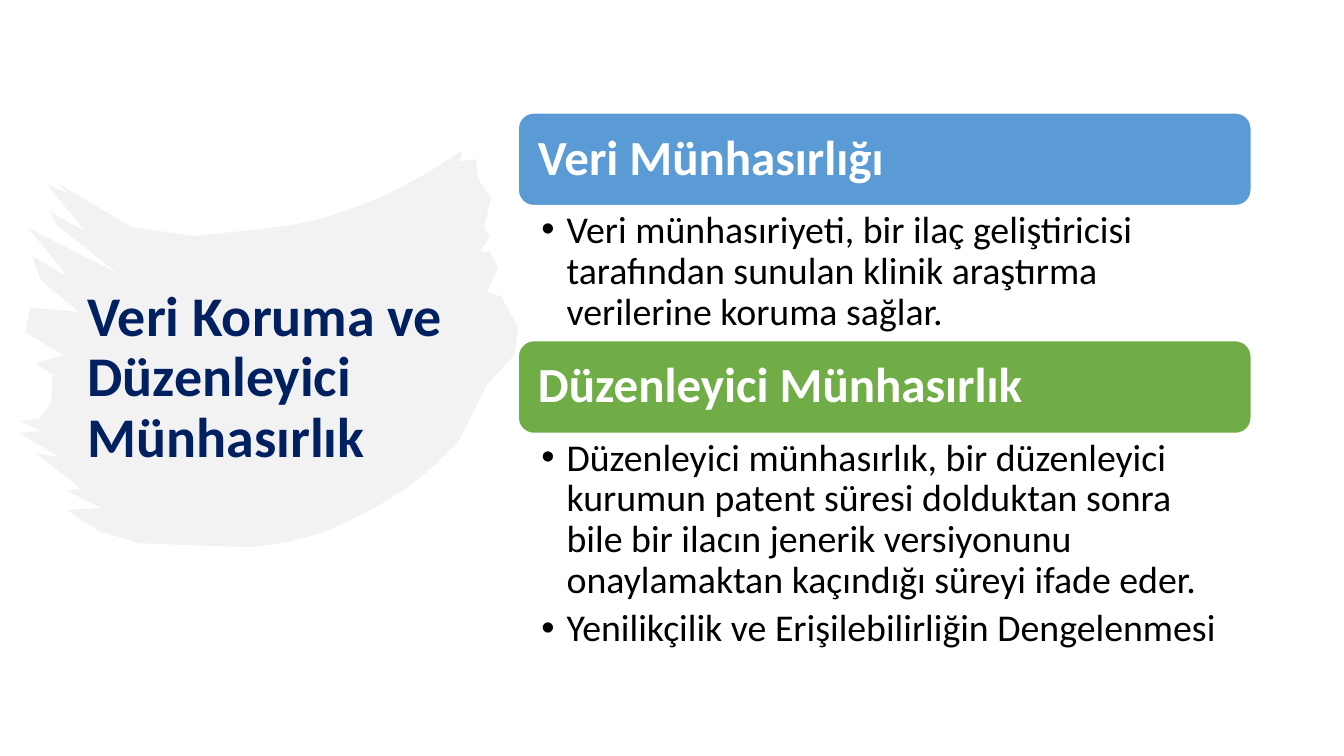
from collections import namedtuple
from dataclasses import dataclass

from lxml import etree
from pptx import Presentation
from pptx import util as u
from pptx.dml.color import RGBColor
from pptx.enum import shapes, text
from pptx.oxml.ns import qn

Box = namedtuple("Box", "left top width height")


@dataclass(frozen=True)
class Theme:
    font: str = "Calibri"
    title_size: int = 40
    heading_size: int = 35
    body_size: int = 27
    title: str = "002060"
    heading: str = "FFFFFF"
    body: str = "000000"
    brush: str = "E7E6E6"
    data_bar: str = "5B9BD5"
    regulatory_bar: str = "70AD47"


THEME = Theme()
SLIDE_WIDTH, SLIDE_HEIGHT = 13.33, 7.5
BRUSH = Box(0.19, 1.5, 4.95, 3.93)
TITLE = Box(0.77, 0.1 * SLIDE_HEIGHT, 4.37, 6.01)
SECTIONS = Box(5.14, 1.12, 7.27, 5.44)
HEADING_HEIGHT = 0.92

TITLE_TEXT = "Veri Koruma ve Düzenleyici Münhasırlık"
# heading, bar colour, body height, bullets
SECTION_CONTENT = [
    ("Veri Münhasırlığı", THEME.data_bar, 1.34, [
        "Veri münhasıriyeti, bir ilaç geliştiricisi tarafından sunulan klinik "
        "araştırma verilerine koruma sağlar."]),
    ("Düzenleyici Münhasırlık", THEME.regulatory_bar, 2.26, [
        "Düzenleyici münhasırlık, bir düzenleyici kurumun patent süresi "
        "dolduktan sonra bile bir ilacın jenerik versiyonunu onaylamaktan "
        "kaçındığı süreyi ifade eder.",
        "Yenilikçilik ve Erişilebilirliğin Dengelenmesi"]),
]

# Edges of the brush stroke, clockwise; scaled to its box when drawn
RIGHT_EDGE = [(458, 150), (456, 160), (472, 158), (474, 177), (487, 197),
              (480, 226), (486, 235), (476, 249), (486, 250), (494, 266),
              (483, 289), (497, 294), (514, 325), (510, 352), (483, 381)]
BOTTOM_ARC = [(456, 435), (456, 436), (372, 533), (249, 542)]
LEFT_EDGE = [(139, 538), (98, 526), (66, 505), (100, 503), (66, 486),
             (80, 484), (36, 449), (60, 453), (19, 429), (41, 427),
             (20, 417), (39, 415), (51, 398), (52, 371), (35, 360),
             (63, 352), (25, 329), (30, 305), (78, 309), (40, 277),
             (32, 254), (67, 274), (28, 226), (117, 271), (56, 223),
             (50, 210), (85, 230), (46, 182), (67, 192), (58, 182),
             (130, 225), (192, 234)]
TOP_ARC = [(260, 227), (342, 220), (400, 184), (423, 172)]


def inches(box):
    return [u.Inches(length) for length in box]


def colour(hex_value):
    return RGBColor.from_string(hex_value)


def format_paragraph(paragraph, size, hex_value, bold=False):
    paragraph.alignment = text.PP_ALIGN.LEFT
    paragraph.line_spacing = 0.9
    for run in paragraph.runs:
        run.font.name = THEME.font
        run.font.size = u.Pt(size)
        run.font.bold = bold
        run.font.color.rgb = colour(hex_value)


def set_insets(frame, left, top, right, bottom):
    frame.margin_left, frame.margin_top = u.Inches(left), u.Inches(top)
    frame.margin_right, frame.margin_bottom = u.Inches(right), u.Inches(bottom)


def add_bullet(paragraph, indent):
    properties = paragraph._p.get_or_add_pPr()
    properties.set("marL", str(u.Inches(indent)))
    properties.set("indent", str(-u.Inches(indent)))
    etree.SubElement(properties, qn("a:buFont")).set("typeface", "Arial")
    etree.SubElement(properties, qn("a:buChar")).set("char", "•")


def arc_points(controls, steps=10):
    """Return points along the cubic curve with these four controls."""
    def at(t):
        weights = ((1 - t) ** 3, 3 * t * (1 - t) ** 2, 3 * t * t * (1 - t), t ** 3)
        return tuple(sum(w * value for w, value in zip(weights, axis))
                     for axis in zip(*controls))
    return [at(step / steps) for step in range(steps + 1)]


def draw_brush(slide, box):
    """Draw the half-transparent stroke behind everything else."""
    outline = (RIGHT_EDGE + arc_points(BOTTOM_ARC)
               + LEFT_EDGE + arc_points(TOP_ARC))
    xs, ys = zip(*outline)
    left, top, width, height = inches(box)
    scale = width / (max(xs) - min(xs)), height / (max(ys) - min(ys))
    edge = [(x - min(xs), y - min(ys)) for x, y in outline]
    builder = slide.shapes.build_freeform(*edge[0], scale=scale)
    builder.add_line_segments(edge[1:], close=True)
    brush = builder.convert_to_shape(left, top)
    brush.shadow.inherit = False
    brush.line.fill.background()
    brush.fill.solid()
    brush.fill.fore_color.rgb = colour(THEME.brush)
    tint = brush._element.spPr.find(".//" + qn("a:srgbClr"))
    etree.SubElement(tint, qn("a:alpha")).set("val", "50000")
    slide.shapes._spTree.insert(2, brush._element)


def write_title(slide, box):
    title = slide.shapes.title
    title.left, title.top, title.width, title.height = inches(box)
    frame = title.text_frame
    frame.text = TITLE_TEXT
    frame.word_wrap = True
    frame.auto_size = text.MSO_AUTO_SIZE.NONE
    frame.vertical_anchor = text.MSO_ANCHOR.MIDDLE
    format_paragraph(frame.paragraphs[0], THEME.title_size, THEME.title, True)


def add_heading(slide, box, heading, bar_colour):
    bar = slide.shapes.add_shape(
        shapes.MSO_SHAPE.ROUNDED_RECTANGLE, *inches(box))
    bar.shadow.inherit = False
    bar.fill.solid()
    bar.fill.fore_color.rgb = colour(bar_colour)
    bar.line.color.rgb = colour(THEME.heading)
    bar.line.width = u.Pt(1)
    frame = bar.text_frame
    frame.text = heading
    frame.word_wrap = True
    frame.vertical_anchor = text.MSO_ANCHOR.MIDDLE
    set_insets(frame, 0.15, 0.1, 0.15, 0.1)
    format_paragraph(frame.paragraphs[0], THEME.heading_size, THEME.heading, True)


def add_body(slide, box, bullets):
    frame = slide.shapes.add_textbox(*inches(box)).text_frame
    frame.word_wrap = True
    set_insets(frame, 0.23, 0.05, 0.27, 0.05)
    frame.text = "\n".join(bullets)
    for paragraph in frame.paragraphs:
        add_bullet(paragraph, 0.25)
        format_paragraph(paragraph, THEME.body_size, THEME.body)
        paragraph.space_after = u.Pt(5)


def stack_sections(slide, box):
    top = box.top
    for heading, bar_colour, body_height, bullets in SECTION_CONTENT:
        add_heading(slide, Box(box.left, top, box.width, HEADING_HEIGHT),
                    heading, bar_colour)
        top += HEADING_HEIGHT
        add_body(slide, Box(box.left, top, box.width, body_height), bullets)
        top += body_height


def main():
    deck = Presentation()
    deck.slide_width = u.Inches(SLIDE_WIDTH)
    deck.slide_height = u.Inches(SLIDE_HEIGHT)
    slide = deck.slides.add_slide(deck.slide_layouts.get_by_name("Title Only"))
    draw_brush(slide, BRUSH)
    write_title(slide, TITLE)
    stack_sections(slide, SECTIONS)
    deck.save("out.pptx")


if __name__ == "__main__":
    main()
